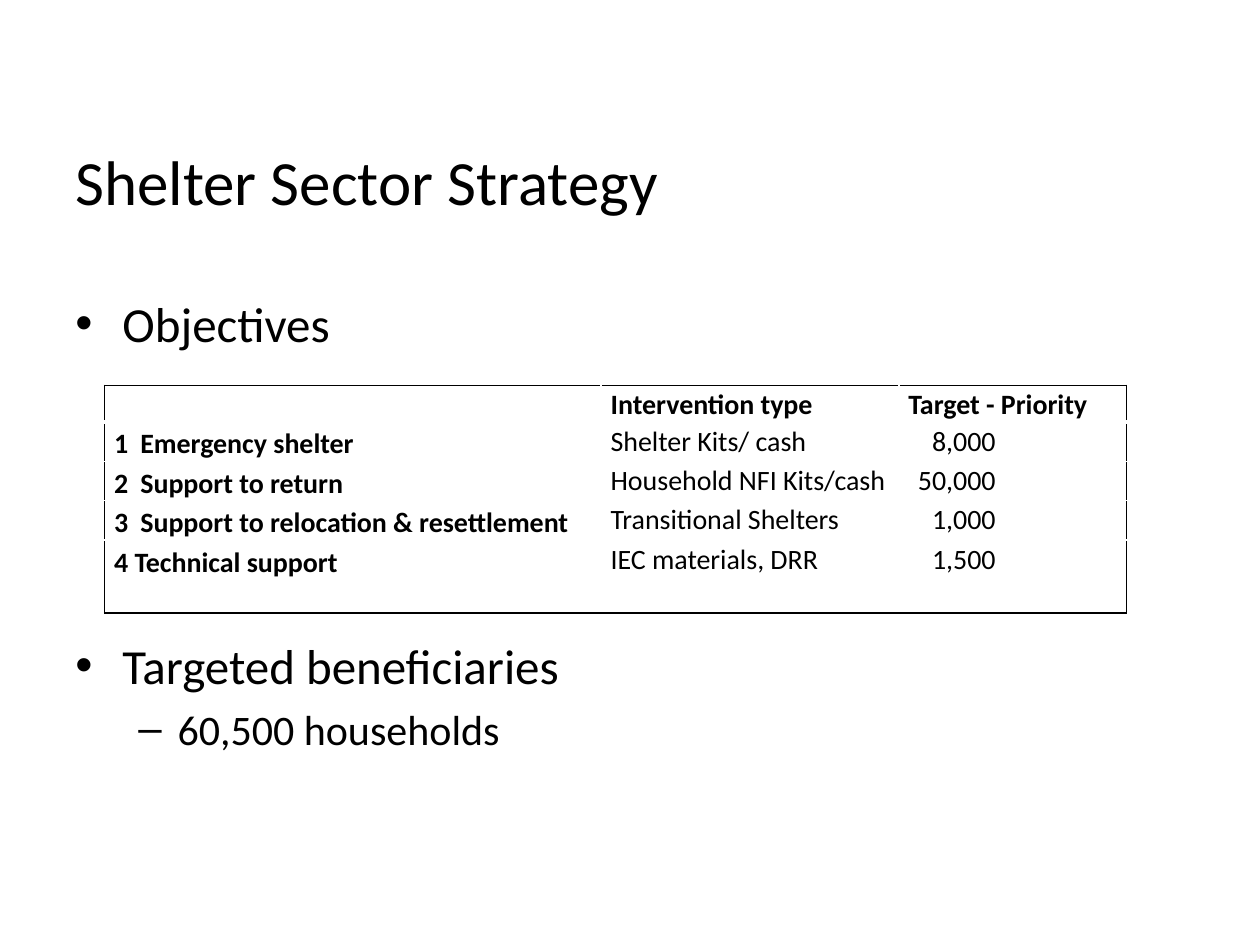
from lxml.etree import SubElement
from pptx import Presentation
from pptx.dml.color import RGBColor
from pptx.enum.text import PP_ALIGN
from pptx.oxml.ns import qn
from pptx.util import Cm, Pt

COLORS = {"text": "000000", "frame": "000000", "grid": "FFFFFF"}
FONT = "Calibri"
BODY = [
    ("Shelter Sector Strategy", 36, 0, None, 0, 0),
    ("Objectives", 28, 43, "•", 0.95, 0.95),
    ("Targeted beneficiaries", 28, 162, "•", 0.95, 0.95),
    ("60,500 households", 24, 5, "–", 2.06, 0.79),
]
OBJECTIVES = [
    ("", "Intervention type", "Target - Priority"),
    ("1\tEmergency shelter", "Shelter Kits/ cash", "8,000"),
    ("2\tSupport to return", "Household NFI Kits/cash", "50,000"),
    ("3\tSupport to relocation & resettlement", "Transitional Shelters", "1,000"),
    ("4 Technical support", "IEC materials, DRR", "1,500"),
]
COLUMN_WIDTHS = [10.01, 6, 4.59]
ROW_HEIGHTS = [0.74, 0.79, 0.79, 0.8, 1.47]


def style_runs(paragraph, size, bold=False):
    """Format every run of a paragraph."""
    for run in paragraph.runs:
        run.font.name = FONT
        run.font.size = Pt(size)
        run.font.bold = bold
        run.font.color.rgb = RGBColor.from_string(COLORS["text"])


def add_bullet(paragraph, character, margin, hanging):
    """Give a paragraph a hanging bullet."""
    properties = paragraph._p.get_or_add_pPr()
    properties.set("marL", str(Cm(margin)))
    properties.set("indent", str(-Cm(hanging)))
    SubElement(properties, qn("a:buFont"), typeface="Arial")
    SubElement(properties, qn("a:buChar"), char=character)


def add_body(slide, left, top, width, height):
    """Place the title line and the bulleted lines in one text box."""
    text_frame = slide.shapes.add_textbox(Cm(left), Cm(top), Cm(width), Cm(height)).text_frame
    text_frame.word_wrap = True
    text_frame.margin_top = Cm(0.2)
    for index, (text, size, gap, character, margin, hanging) in enumerate(BODY):
        paragraph = text_frame.add_paragraph() if index else text_frame.paragraphs[0]
        paragraph.text = text
        if gap:
            paragraph.space_before = Pt(gap)
        if character:
            add_bullet(paragraph, character, margin, hanging)
        style_runs(paragraph, size)


def add_border(cell, side, color, width):
    """Draw one side of a cell."""
    line = SubElement(cell._tc.get_or_add_tcPr(), qn(f"a:ln{side}"), w=str(Pt(width)))
    fill = SubElement(line, qn("a:solidFill"))
    SubElement(fill, qn("a:srgbClr"), val=COLORS[color])


def frame_cell(cell, row, column):
    """Draw outer sides in the frame colour and inner sides in the grid colour."""
    last_row, last_column = len(ROW_HEIGHTS) - 1, len(COLUMN_WIDTHS) - 1
    outer_sides = {"L": column == 0, "R": column == last_column, "T": row == 0, "B": row == last_row}
    for side, outer in outer_sides.items():
        thick = (row == 0 and side == "B") or (row == 1 and side == "T")
        add_border(cell, side, "frame" if outer else "grid", 3 if thick else 1)
    cell.fill.background()


def fill_cell(cell, text, row, column):
    """Write and align the text of one cell."""
    cell.margin_left = cell.margin_right = Cm(0.19)
    cell.margin_top = cell.margin_bottom = 0
    paragraph = cell.text_frame.paragraphs[0]
    paragraph.text = text
    paragraph.line_spacing = 1.15 if row and column == 0 else 1.07
    if row and column == 2:
        paragraph.alignment = PP_ALIGN.RIGHT
        cell.margin_right = Cm(2.64)
    if "\t" in text:
        tabs = SubElement(paragraph._p.get_or_add_pPr(), qn("a:tabLst"))
        SubElement(tabs, qn("a:tab"), pos=str(Cm(0.53)), algn="l")
    if not text:
        SubElement(paragraph._p, qn("a:endParaRPr"), sz="1600")
    style_runs(paragraph, 16, bold=row == 0 or column == 0)


def add_objectives_table(slide, left, top):
    """Place the table of objectives, interventions and targets."""
    table = slide.shapes.add_table(
        len(ROW_HEIGHTS), len(COLUMN_WIDTHS), Cm(left), Cm(top),
        Cm(sum(COLUMN_WIDTHS)), Cm(sum(ROW_HEIGHTS)),
    ).table
    table.first_row = table.horz_banding = False
    for table_column, width in zip(table.columns, COLUMN_WIDTHS):
        table_column.width = Cm(width)
    for row, height in enumerate(ROW_HEIGHTS):
        table.rows[row].height = Cm(height)
        for column, text in enumerate(OBJECTIVES[row]):
            cell = table.cell(row, column)
            fill_cell(cell, text, row, column)
            frame_cell(cell, row, column)


def main():
    """Build and save the presentation."""
    presentation = Presentation()
    presentation.slide_width, presentation.slide_height = Cm(25.4), Cm(19.05)
    slide = presentation.slides.add_slide(presentation.slide_layouts[6])
    add_body(slide, 1.27, 2.67, 22.86, 14.66)
    add_objectives_table(slide, 2.11, 7.77)
    presentation.save("out.pptx")


if __name__ == "__main__":
    main()
